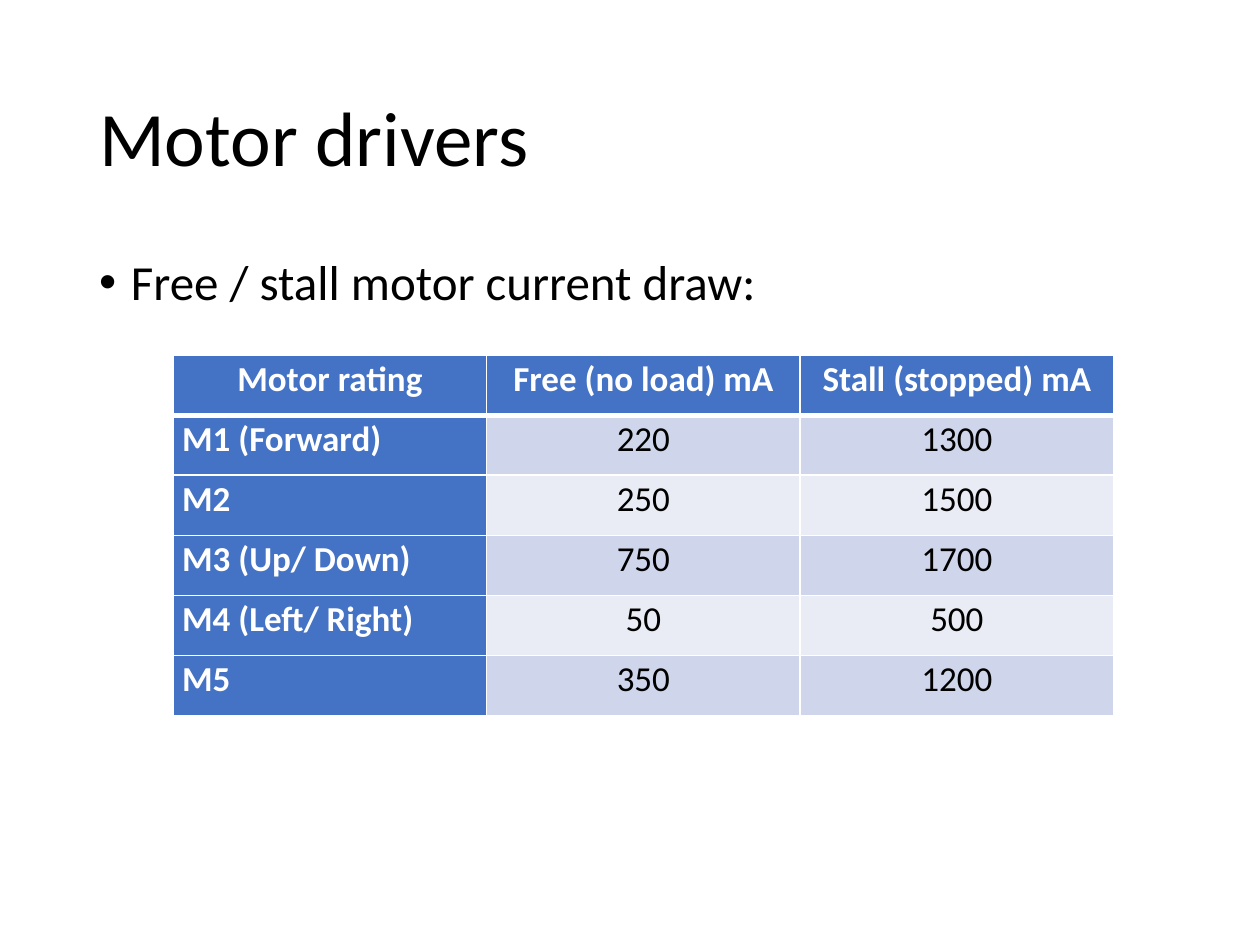
from dataclasses import dataclass

from pptx import Presentation
from pptx import util as u
from pptx.dml.color import RGBColor
from pptx.enum import text
from pptx.oxml import parse_xml
from pptx.oxml.ns import nsdecls

FONT = "Calibri"
WHITE, BLACK, BLUE = "FFFFFF", "000000", "4472C4"
BANDS = ("CFD5EA", "E9EBF5")
HEADERS = ("Motor rating", "Free (no load) mA", "Stall (stopped) mA")
COL_W, ROW_H = u.Cm(6.32), u.Cm(1.21)


@dataclass
class Motor:
    name: str
    free: int
    stall: int


@dataclass
class TextBlock:
    words: str
    top: float
    height: float
    size: int
    anchor: text.MSO_ANCHOR
    bullet: bool = False


MOTORS = [
    Motor("M1 (Forward)", 220, 1300),
    Motor("M2", 250, 1500),
    Motor("M3 (Up/ Down)", 750, 1700),
    Motor("M4 (Left/ Right)", 50, 500),
    Motor("M5", 350, 1200),
]
BLOCKS = [
    TextBlock("Motor drivers", 1.01, 3.68, 44, text.MSO_ANCHOR.MIDDLE),
    TextBlock("Free / stall motor current draw:", 5.07, 12.09, 28,
              text.MSO_ANCHOR.TOP, bullet=True),
]


def rgb(color: str) -> RGBColor:
    return RGBColor.from_string(color)


def add_run(p, words: str, size: int, color: str, bold: bool = False) -> None:
    r = p.add_run()
    r.text = words
    r.font.name = FONT
    r.font.size = u.Pt(size)
    r.font.bold = bold
    r.font.color.rgb = rgb(color)


def add_bullet(p) -> None:
    p.space_before = u.Pt(10)
    pPr = p._p.get_or_add_pPr()
    pPr.set("marL", str(u.Cm(0.64)))
    pPr.set("indent", str(-u.Cm(0.64)))
    pPr.append(parse_xml(f'<a:buFont {nsdecls("a")} typeface="Arial"/>'))
    pPr.append(parse_xml(f'<a:buChar {nsdecls("a")} char="•"/>'))


def draw_block(s, block: TextBlock) -> None:
    sp = s.shapes.add_textbox(u.Cm(1.75), u.Cm(block.top), u.Cm(21.9), u.Cm(block.height))
    tf = sp.text_frame
    tf.word_wrap = True
    tf.vertical_anchor = block.anchor
    p = tf.paragraphs[0]
    p.line_spacing = 0.9
    if block.bullet:
        add_bullet(p)
    add_run(p, block.words, block.size, BLACK)


def set_borders(cell, top: int, bottom: int) -> None:
    tcPr = cell._tc.get_or_add_tcPr()
    widths = {"lnL": 1, "lnR": 1, "lnT": top, "lnB": bottom}
    for i, (side, width) in enumerate(widths.items()):
        tcPr.insert(i, parse_xml(
            f'<a:{side} {nsdecls("a")} w="{u.Pt(width)}"><a:solidFill>'
            f'<a:srgbClr val="{WHITE}"/></a:solidFill></a:{side}>'))


def draw_cell(cell, words: str, row: int, col: int) -> None:
    heading = row == 0 or col == 0
    cell.margin_left = cell.margin_right = u.Cm(0.18)
    cell.margin_top = cell.margin_bottom = 0
    cell.fill.solid()
    cell.fill.fore_color.rgb = rgb(BLUE if heading else BANDS[(row - 1) % 2])
    set_borders(cell, top=3 if row == 1 else 1, bottom=3 if row == 0 else 1)
    p = cell.text_frame.paragraphs[0]
    p.line_spacing = 1.07
    centred = row == 0 or col > 0
    p.alignment = text.PP_ALIGN.CENTER if centred else text.PP_ALIGN.LEFT
    add_run(p, words, 20, WHITE if heading else BLACK, heading)


def draw_table(s, motors: list[Motor]) -> None:
    rows = [HEADERS] + [(m.name, str(m.free), str(m.stall)) for m in motors]
    table = s.shapes.add_table(len(rows), len(HEADERS), u.Cm(3.49), u.Cm(7.16),
                               COL_W * len(HEADERS), ROW_H * len(rows)).table
    table.first_col = True
    for column in table.columns:
        column.width = COL_W
    for i, row in enumerate(rows):
        table.rows[i].height = ROW_H
        for j, words in enumerate(row):
            draw_cell(table.cell(i, j), words, i, j)


def main() -> None:
    prs = Presentation()
    prs.slide_width, prs.slide_height = u.Cm(25.4), u.Cm(19.05)
    s = prs.slides.add_slide(prs.slide_layouts[6])
    for block in BLOCKS:
        draw_block(s, block)
    draw_table(s, MOTORS)
    prs.save("out.pptx")


if __name__ == "__main__":
    main()
